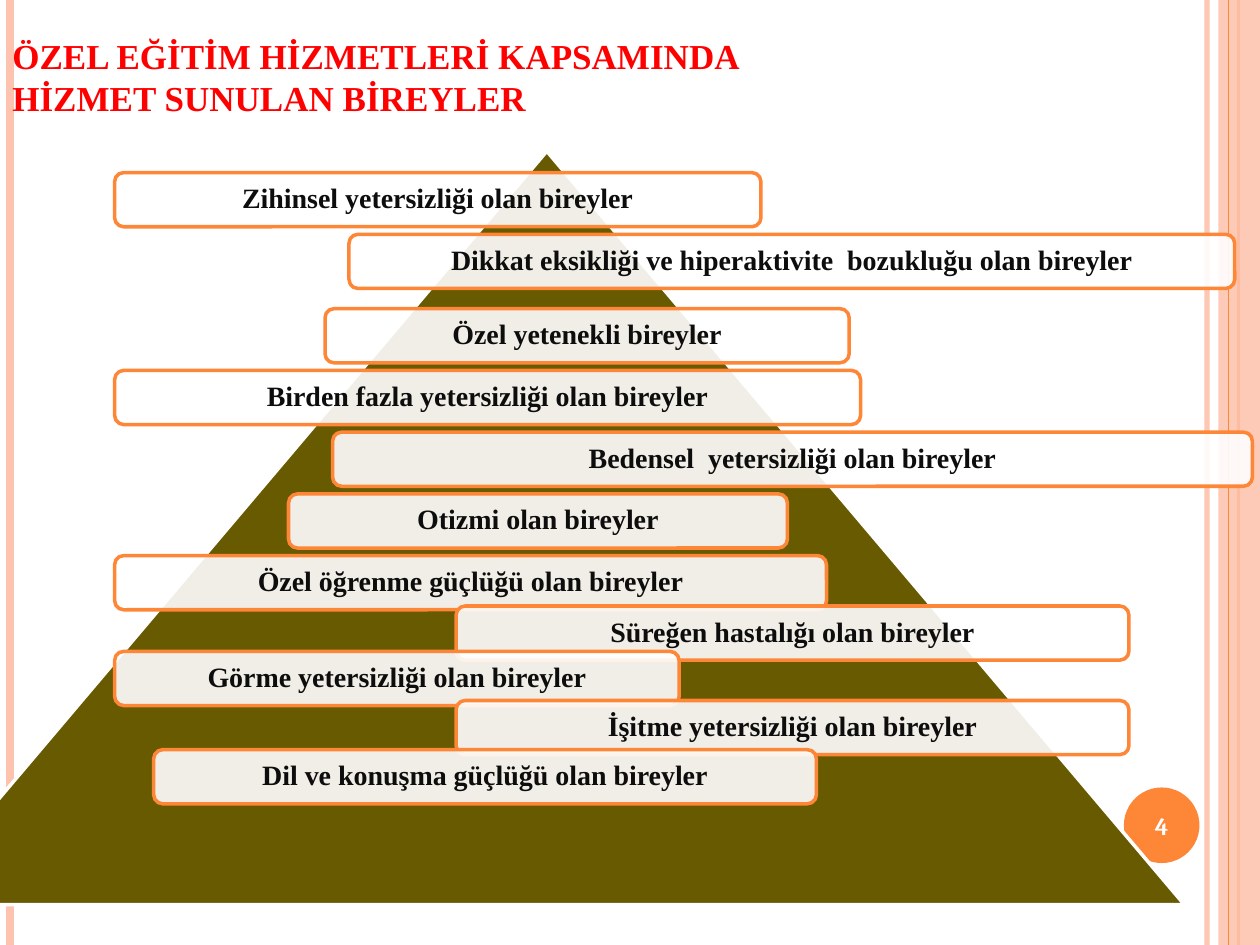
"""Build the slide on individuals served by special education."""
from lxml.etree import SubElement
from pptx import Presentation
from pptx.dml.color import RGBColor
from pptx.enum.shapes import MSO_CONNECTOR, MSO_SHAPE
from pptx.enum.text import MSO_ANCHOR, PP_ALIGN
from pptx.oxml.ns import qn
from pptx.util import Inches, Pt

ORANGE, PEACH, WHITE = "FE8637", "FEC3AE", "FFFFFF"


def paint(fill, color, opacity=100):
    fill.solid()
    fill.fore_color.rgb = RGBColor.from_string(color)
    if opacity < 100:
        color_xml = fill._xPr.find(qn("a:solidFill"))[0]
        SubElement(color_xml, qn("a:alpha"), val=str(opacity * 1000))


def write(shape, text, size, color, font="Times New Roman", align=PP_ALIGN.CENTER,
          anchor=MSO_ANCHOR.MIDDLE, spacing=1.0, inset=0.07):
    frame = shape.text_frame
    frame.word_wrap = True
    frame.vertical_anchor = anchor
    frame.margin_left = frame.margin_right = Inches(inset)
    frame.margin_top = frame.margin_bottom = Inches(min(inset, 0.05))
    paragraph = frame.paragraphs[0]
    paragraph.alignment = align
    paragraph.line_spacing = spacing
    for index, line in enumerate(text.split("\n")):
        if index:
            paragraph.add_line_break()
        run = paragraph.add_run()
        run.text = line
        run.font.name = font
        run.font.size = Pt(size)
        run.font.bold = True
        paint(run.font.fill, color)


prs = Presentation()
prs.slide_width, prs.slide_height = Inches(10), Inches(7.5)
slide = prs.slides.add_slide(prs.slide_layouts[6])
shapes = slide.shapes
paint(slide.background.fill, WHITE)

edge_band = shapes.add_shape(MSO_SHAPE.RECTANGLE, Inches(9.67), 0, Inches(0.33), Inches(7.5))
edge_band.shadow.inherit = False
paint(edge_band.fill, PEACH, 87)
edge_band.line.fill.background()

for x, color, width, opacity in [
    (9.58, PEACH, 3, 93),
    (0.08, PEACH, 4.5, 100),
    (9.83, ORANGE, 1.5, 100),
    (9.75, ORANGE, 0.75, 100),
]:
    stripe = shapes.add_connector(MSO_CONNECTOR.STRAIGHT, Inches(x), 0, Inches(x), Inches(7.5))
    stripe.line.width = Pt(width)
    paint(stripe.line.fill, color, opacity)
    SubElement(stripe._element.spPr, qn("a:effectLst"))
    if x == 9.83:
        shapes._spTree.remove(edge_band._element)
        shapes._spTree.append(edge_band._element)

page_badge = shapes.add_shape(MSO_SHAPE.OVAL, Inches(8.92), Inches(6.25), Inches(0.6), Inches(0.6))
page_badge.shadow.inherit = False
paint(page_badge.fill, ORANGE)
page_badge.line.fill.background()
write(page_badge, "4", 14, WHITE, font="Cambria", inset=0)

heading = shapes.add_textbox(0, 0, Inches(10), Inches(0.99))
write(heading, "ÖZEL EĞİTİM HİZMETLERİ KAPSAMINDA\nHİZMET SUNULAN BİREYLER", 20, "FF0000",
      align=PP_ALIGN.LEFT, anchor=MSO_ANCHOR.BOTTOM, inset=0.1)

pyramid = shapes.add_shape(MSO_SHAPE.ISOSCELES_TRIANGLE, Inches(-0.72), Inches(1.2),
                           Inches(10.12), Inches(5.98))
pyramid.shadow.inherit = False
paint(pyramid.fill, "675A00")
paint(pyramid.line.fill, WHITE)
pyramid.line.width = Pt(2)

for left, top, width, group in [
    (0.91, 1.37, 5.13, "Zihinsel yetersizliği olan bireyler"),
    (2.77, 1.86, 7.03, "Dikkat eksikliği ve hiperaktivite  bozukluğu olan bireyler"),
    (2.58, 2.45, 4.16, "Özel yetenekli bireyler"),
    (0.91, 2.94, 5.92, "Birden fazla yetersizliği olan bireyler"),
    (2.64, 3.43, 7.3, "Bedensel  yetersizliği olan bireyler"),
    (2.29, 3.92, 3.96, "Otizmi olan bireyler"),
    (0.91, 4.41, 5.65, "Özel öğrenme güçlüğü olan bireyler"),
    (3.62, 4.81, 5.34, "Süreğen hastalığı olan bireyler"),
    (0.91, 5.17, 4.48, "Görme yetersizliği olan bireyler"),
    (3.62, 5.56, 5.34, "İşitme yetersizliği olan bireyler"),
    (1.22, 5.95, 5.26, "Dil ve konuşma güçlüğü olan bireyler"),
]:
    label = shapes.add_shape(MSO_SHAPE.ROUNDED_RECTANGLE, Inches(left), Inches(top),
                             Inches(width), Inches(0.43))
    label.shadow.inherit = False
    paint(label.fill, WHITE, 90)
    paint(label.line.fill, ORANGE)
    label.line.width = Pt(2)
    write(label, group, 16, "0D0D0D", spacing=0.9)

prs.save("out.pptx")
